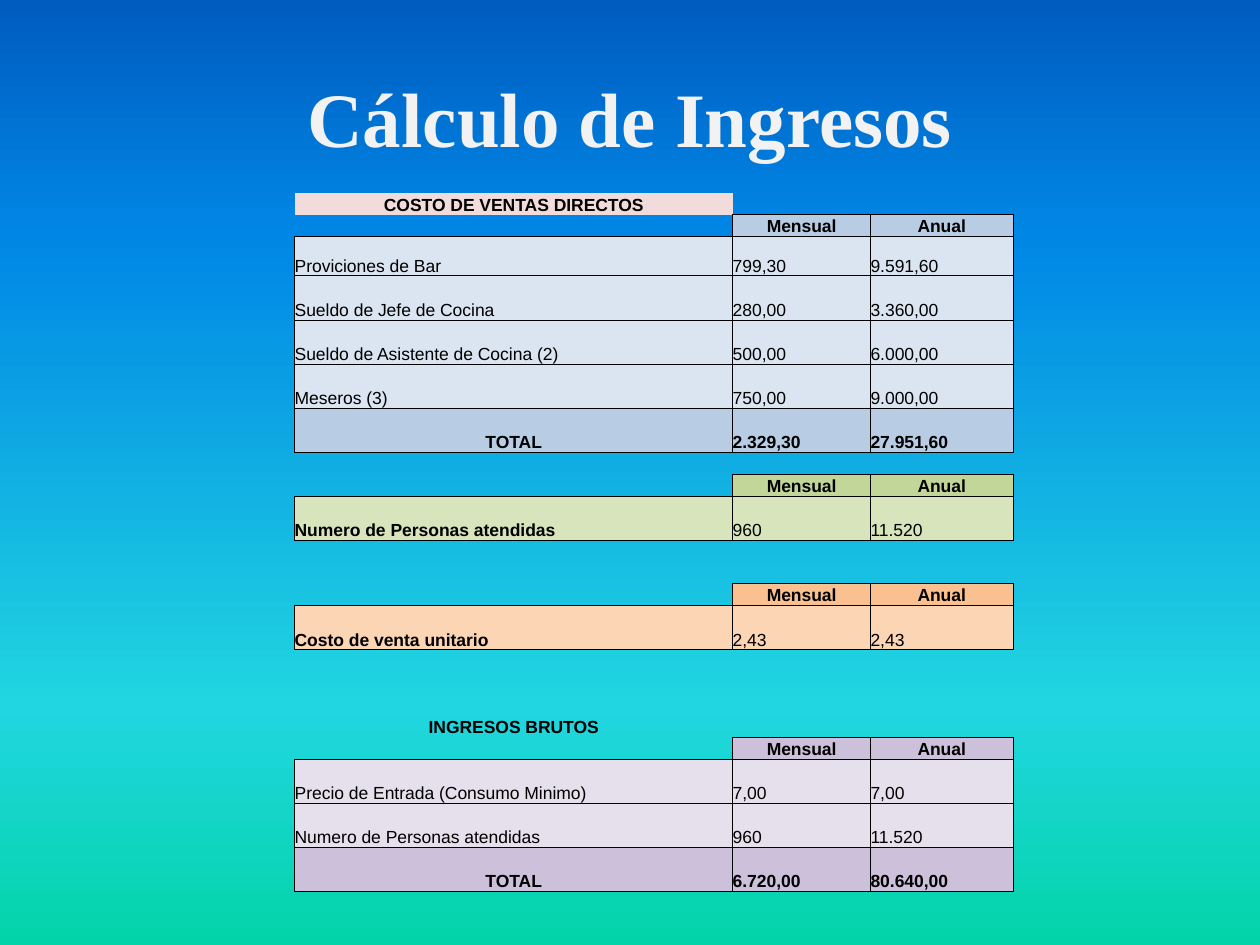
from copy import deepcopy
from dataclasses import dataclass
from typing import Optional

from lxml.etree import SubElement
from pptx import Presentation
from pptx.dml.color import RGBColor
from pptx.enum.text import MSO_ANCHOR as Anchor, PP_ALIGN as Align
from pptx.oxml import parse_xml
from pptx.oxml.ns import nsdecls, qn
from pptx.util import Cm, Pt

BLACK = RGBColor(0x00, 0x00, 0x00)
TITLE_WHITE = RGBColor(0xF2, 0xF2, 0xF2)
PINK = RGBColor(0xF2, 0xDC, 0xDB)
BLUE, PALE_BLUE = RGBColor(0xB8, 0xCC, 0xE4), RGBColor(0xDB, 0xE5, 0xF1)
GREEN, PALE_GREEN = RGBColor(0xC2, 0xD6, 0x9A), RGBColor(0xD7, 0xE4, 0xBC)
ORANGE, PALE_ORANGE = RGBColor(0xFA, 0xC0, 0x90), RGBColor(0xFC, 0xD5, 0xB4)
PURPLE, PALE_PURPLE = RGBColor(0xCC, 0xC0, 0xDA), RGBColor(0xE5, 0xE0, 0xEC)
BACKGROUND = [
    (0, RGBColor(0x03, 0xD4, 0xA8)),
    (0.25, RGBColor(0x21, 0xD6, 0xE0)),
    (0.75, RGBColor(0x00, 0x87, 0xE6)),
    (1, RGBColor(0x00, 0x5C, 0xBF)),
]

COLUMN_WIDTHS = [Cm(8.83), Cm(2.78), Cm(2.87)]
THIN, FIRST, TALL = Cm(0.44), Cm(0.79), Cm(0.89)
NO_STYLE = "{2D5ABB26-0587-4C30-8999-92F81FD0307C}"


@dataclass
class Row:
    label: str = ""
    monthly: str = ""
    yearly: str = ""
    fill: Optional[RGBColor] = None
    height: int = TALL
    bold_label: bool = False
    bold_values: bool = False
    center_label: bool = False
    center_values: bool = False
    bordered: bool = True


def blank() -> Row:
    return Row(height=THIN)


def heading(label: str, fill: Optional[RGBColor] = None) -> Row:
    return Row(label, fill=fill, height=THIN, bold_label=True,
               center_label=True, bordered=False)


def periods(fill: RGBColor) -> Row:
    """Column captions above a block of figures."""
    return Row("", "Mensual", "Anual", fill, THIN, bold_values=True, center_values=True)


def total(monthly: str, yearly: str, fill: RGBColor) -> Row:
    return Row("TOTAL", monthly, yearly, fill, bold_label=True,
               bold_values=True, center_label=True)


ROWS = [
    heading("COSTO DE VENTAS DIRECTOS", PINK),
    periods(BLUE),
    Row("Proviciones de Bar", "799,30", "9.591,60", PALE_BLUE, FIRST),
    Row("Sueldo de Jefe de Cocina", "280,00", "3.360,00", PALE_BLUE),
    Row("Sueldo de Asistente de Cocina (2)", "500,00", "6.000,00", PALE_BLUE),
    Row("Meseros (3)", "750,00", "9.000,00", PALE_BLUE),
    total("2.329,30", "27.951,60", BLUE),
    blank(),
    periods(GREEN),
    Row("Numero de Personas atendidas", "960", "11.520", PALE_GREEN, bold_label=True),
    blank(),
    blank(),
    periods(ORANGE),
    Row("Costo de venta unitario", "2,43", "2,43", PALE_ORANGE, bold_label=True),
    blank(),
    blank(),
    blank(),
    heading("INGRESOS BRUTOS"),
    periods(PURPLE),
    Row("Precio de Entrada (Consumo Minimo)", "7,00", "7,00", PALE_PURPLE),
    Row("Numero de Personas atendidas", "960", "11.520", PALE_PURPLE),
    total("6.720,00", "80.640,00", PURPLE),
]


def paint_background(page) -> None:
    fill = page.background.fill
    fill.gradient()
    fill.gradient_angle = 90
    stop_list = page.element.find(".//" + qn("a:gsLst"))
    while len(stop_list) < len(BACKGROUND):
        stop_list.append(deepcopy(stop_list[0]))
    for stop, (position, color) in zip(fill.gradient_stops, BACKGROUND):
        stop.position = position
        stop.color.rgb = color


def add_title(page, text: str) -> None:
    title = page.shapes.title
    title.left, title.top, title.width, title.height = Cm(1.27), Cm(0.76), Cm(22.86), Cm(3.18)
    title.text_frame.text = text
    title.text_frame.vertical_anchor = Anchor.MIDDLE
    para = title.text_frame.paragraphs[0]
    para.alignment = Align.CENTER
    font = para.runs[0].font
    font.name, font.size, font.bold = "Times New Roman", Pt(44), True
    font.color.rgb = TITLE_WHITE


def add_borders(cell) -> None:
    properties = cell._tc.get_or_add_tcPr()
    for index, side in enumerate(("lnL", "lnR", "lnT", "lnB")):
        properties.insert(index, parse_xml(
            f'<a:{side} {nsdecls("a")} w="{Pt(0.5)}"><a:solidFill>'
            f'<a:srgbClr val="{BLACK}"/></a:solidFill></a:{side}>'))


def fill_cell(cell, text: str, row: Row, bold: bool, centered: bool) -> None:
    cell.margin_left = cell.margin_right = cell.margin_top = cell.margin_bottom = 0
    cell.vertical_anchor = Anchor.BOTTOM
    para = cell.text_frame.paragraphs[0]
    if not text:
        SubElement(para._p, qn("a:endParaRPr"), sz="1000")
        cell.fill.background()
        return
    para.text = text
    para.alignment = Align.CENTER if centered else Align.LEFT
    font = para.runs[0].font
    font.name, font.size, font.bold = "Arial", Pt(10), bold
    font.color.rgb = BLACK
    if row.fill is None:
        cell.fill.background()
    else:
        cell.fill.solid()
        cell.fill.fore_color.rgb = row.fill
    if row.bordered:
        add_borders(cell)


def add_income_table(page) -> None:
    frame = page.shapes.add_table(len(ROWS), len(COLUMN_WIDTHS), Cm(5.94), Cm(3.89),
                                  sum(COLUMN_WIDTHS), sum(row.height for row in ROWS))
    table = frame.table
    table.first_row = table.horz_banding = False
    table._tbl.tblPr.find(qn("a:tableStyleId")).text = NO_STYLE
    for column, width in zip(table.columns, COLUMN_WIDTHS):
        column.width = width
    for index, row in enumerate(ROWS):
        table.rows[index].height = row.height
        fill_cell(table.cell(index, 0), row.label, row, row.bold_label, row.center_label)
        for position, value in enumerate((row.monthly, row.yearly), start=1):
            fill_cell(table.cell(index, position), value, row,
                      row.bold_values, row.center_values)


def main() -> None:
    deck = Presentation()
    deck.slide_width, deck.slide_height = Cm(25.4), Cm(19.05)
    page = deck.slides.add_slide(deck.slide_layouts[5])
    paint_background(page)
    add_title(page, "Cálculo de Ingresos")
    add_income_table(page)
    deck.save("out.pptx")


if __name__ == "__main__":
    main()
